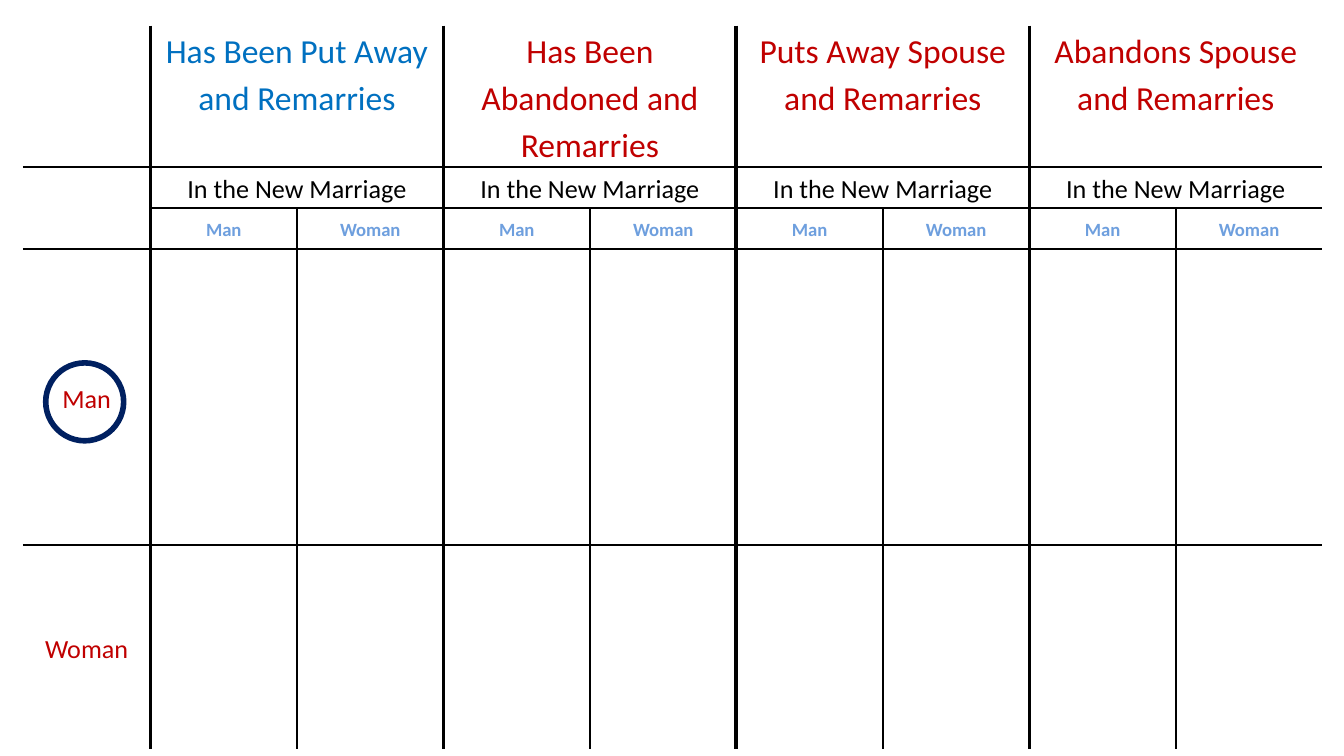
from lxml.etree import SubElement
from pptx import Presentation
from pptx.dml.color import RGBColor
from pptx.enum.shapes import MSO_SHAPE as Shape
from pptx.enum.text import MSO_ANCHOR as Anchor, PP_ALIGN as Align
from pptx.oxml.ns import qn
from pptx.util import Inches, Pt

BLACK, RED, BLUE, NAVY = "000000", "C00000", "0070C0", "002060"
SUBHEAD_STOPS = [(0, "2F4D71"), (78, "6E9FDE"), (100, "F1F5FC")]
SITUATIONS = [
    ("Has Been Put Away and Remarries", BLUE),
    ("Has Been Abandoned and Remarries", RED),
    ("Puts Away Spouse and Remarries", RED),
    ("Abandons Spouse and Remarries", RED),
]
SPOUSES = ["Man", "Woman"]
COLUMN_WIDTHS = [0.95] + [1.09] * 8
ROW_HEIGHTS = [0.86, 0.26, 0.26, 2.2, 1.52]
SITUATION_ROW, MARRIAGE_ROW, SPOUSE_ROW, FIRST_BODY_ROW = range(4)


def rgb(color):
    return RGBColor.from_string(color)


def apply_gradient(font, stops):
    font.fill.gradient()
    font.fill.gradient_angle = 270
    stop_list = font._element.find(qn("a:gradFill")).find(qn("a:gsLst"))
    for old_stop in list(stop_list):
        stop_list.remove(old_stop)
    for percent, color in stops:
        stop = SubElement(stop_list, qn("a:gs"), pos=str(percent * 1000))
        SubElement(stop, qn("a:srgbClr"), val=color)


def write(cell, text, size, color=None, bold=False, anchor=Anchor.MIDDLE):
    """Fill a cell with centred text; without a color it takes the gradient."""
    cell.text = text
    cell.vertical_anchor = anchor
    label = cell.text_frame.paragraphs[0]
    label.alignment = Align.CENTER
    label.line_spacing = 1.15
    font = label.font
    font.name, font.size, font.bold = "Calibri", Pt(size), bold
    if color:
        font.color.rgb = rgb(color)
    else:
        apply_gradient(font, SUBHEAD_STOPS)


def vertical_rule(edge, row):
    """Width of the rule at a column edge, 0 for none."""
    if edge in (0, len(COLUMN_WIDTHS)):
        return 0
    if edge == 5:
        return 2.5
    if edge % 2:
        return 1.5
    return 1 if row >= SPOUSE_ROW else 0


def horizontal_rule(edge, column):
    """Width of the rule at a row edge, 0 for none."""
    if edge in (0, len(ROW_HEIGHTS)) or (edge == SPOUSE_ROW and column == 0):
        return 0
    return 1.5 if edge == MARRIAGE_ROW else 1


def draw_borders(cell, row, column):
    properties = cell._tc.get_or_add_tcPr()
    widths = {
        "a:lnL": vertical_rule(column, row),
        "a:lnR": vertical_rule(column + 1, row),
        "a:lnT": horizontal_rule(row, column),
        "a:lnB": horizontal_rule(row + 1, column),
    }
    for side, width in widths.items():
        line = SubElement(properties, qn(side), w=str(Pt(width)))
        if width:
            fill = SubElement(line, qn("a:solidFill"))
            SubElement(fill, qn("a:srgbClr"), val=BLACK)
        else:
            SubElement(line, qn("a:noFill"))


def add_marriage_table(slide, left, top, width, height):
    frame = slide.shapes.add_table(
        len(ROW_HEIGHTS), len(COLUMN_WIDTHS),
        Inches(left), Inches(top), Inches(width), Inches(height))
    table = frame.table
    table.first_row = table.horz_banding = False
    for column, column_width in zip(table.columns, COLUMN_WIDTHS):
        column.width = Inches(column_width)
    for row, row_height in zip(table.rows, ROW_HEIGHTS):
        row.height = Inches(row_height)
    frame.height = Inches(height)

    for r in range(len(ROW_HEIGHTS)):
        for c in range(len(COLUMN_WIDTHS)):
            cell = table.cell(r, c)
            draw_borders(cell, r, c)
            cell.fill.background()
            cell.margin_left = cell.margin_right = Inches(0.07)
            cell.margin_top = cell.margin_bottom = 0

    for i, (situation, color) in enumerate(SITUATIONS):
        first = 1 + 2 * i
        for r in (SITUATION_ROW, MARRIAGE_ROW):
            table.cell(r, first).merge(table.cell(r, first + 1))
        write(table.cell(SITUATION_ROW, first), situation, 18, color, anchor=Anchor.TOP)
        write(table.cell(MARRIAGE_ROW, first), "In the New Marriage", 14, BLACK)
        for j, spouse in enumerate(SPOUSES):
            write(table.cell(SPOUSE_ROW, first + j), spouse, 10, bold=True)
    for r, spouse in enumerate(SPOUSES, FIRST_BODY_ROW):
        write(table.cell(r, 0), spouse, 14, RED)


def add_ring(slide, left, top, diameter):
    ring = slide.shapes.add_shape(
        Shape.OVAL, Inches(left), Inches(top), Inches(diameter), Inches(diameter))
    ring.shadow.inherit = False
    ring.fill.background()
    ring.line.color.rgb = rgb(NAVY)
    ring.line.width = Pt(3)


def main():
    deck = Presentation()
    deck.slide_width = Inches(10)
    deck.slide_height = deck.slide_width * 9 // 16
    slide = deck.slides.add_slide(deck.slide_layouts[6])
    add_marriage_table(slide, 0.17, 0.19, 9.67, 5.39)
    add_ring(slide, 0.34, 2.7, 0.58)
    deck.save("out.pptx")


if __name__ == "__main__":
    main()
